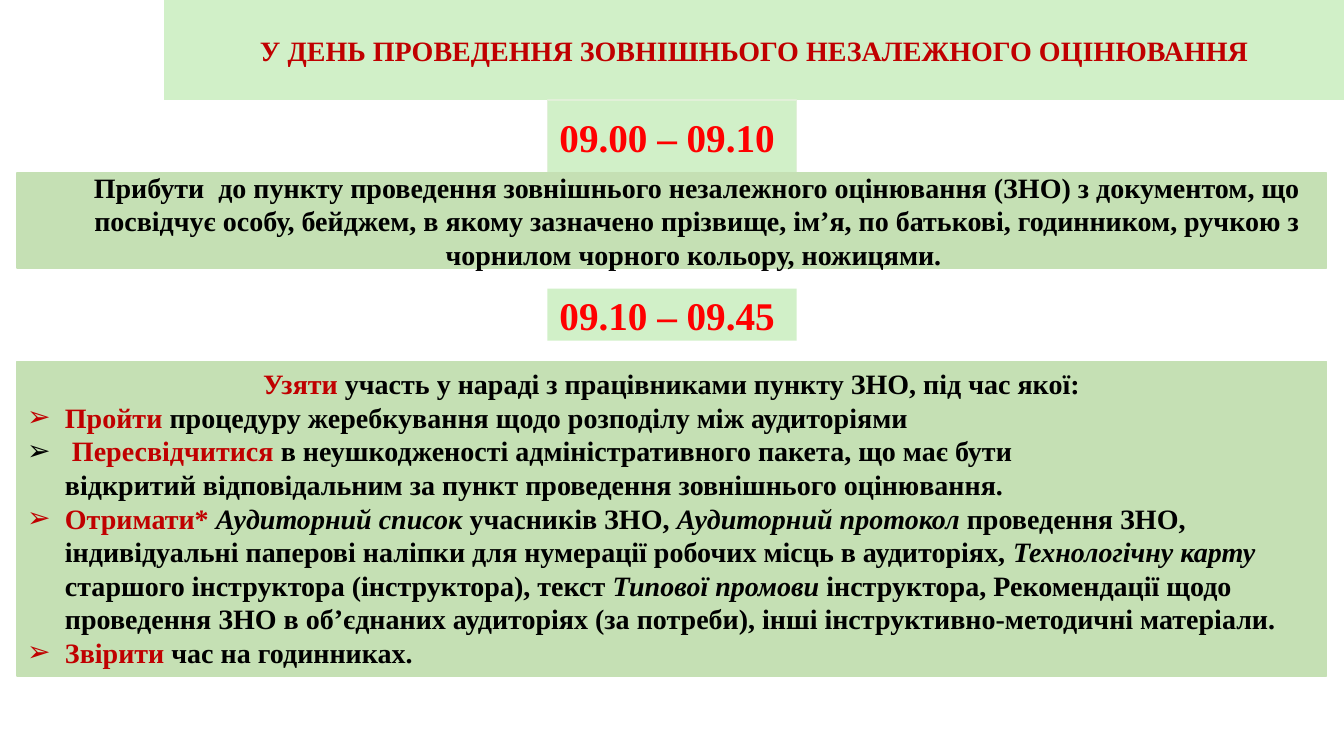
from lxml import etree
from pptx import Presentation
from pptx.dml.color import RGBColor
from pptx.enum.shapes import MSO_SHAPE
from pptx.enum.text import MSO_ANCHOR, MSO_AUTO_SIZE, PP_ALIGN
from pptx.oxml.ns import qn
from pptx.util import Pt

RECT = MSO_SHAPE.RECTANGLE
TOP, MIDDLE = MSO_ANCHOR.TOP, MSO_ANCHOR.MIDDLE
LEFT, CENTER = PP_ALIGN.LEFT, PP_ALIGN.CENTER
FIXED = MSO_AUTO_SIZE.NONE

MINT, SAGE, PALE = "D1F0C8", "C5E0B4", "E2F0D9"
DARK, RED, BLACK = "C00000", "FF0000", "000000"


def color(code):
    return RGBColor.from_string(code)


class Page:
    font = "Times New Roman"

    def __init__(self, slide):
        self.slide = slide

    def style(self, shape, box, fill, line=None, anchor=MIDDLE):
        shape.left, shape.top, shape.width, shape.height = map(Pt, box)
        shape.fill.solid()
        shape.fill.fore_color.rgb = color(fill)
        if line:
            shape.line.color.rgb = color(line)
            shape.line.width = Pt(1)
        else:
            shape.line.fill.background()
        frame = shape.text_frame
        frame.word_wrap = True
        frame.auto_size = FIXED
        frame.vertical_anchor = anchor
        return frame

    def rect(self, box, fill, line=None):
        shape = self.slide.shapes.add_shape(RECT, *map(Pt, box))
        shape.shadow.inherit = False
        return self.style(shape, box, fill, line)

    def para(self, par, runs, size=20, align=CENTER, margin=0, bullet=None):
        props = par._p.get_or_add_pPr()
        props.set("marL", str(Pt(margin)))
        props.set("indent", str(Pt(-margin if bullet else 0)))
        if bullet:
            etree.SubElement(props, qn("a:buChar")).set("char", bullet)
        else:
            etree.SubElement(props, qn("a:buNone"))
        par.alignment = align
        par.space_before = Pt(0)
        for text, ink, *slant in runs:
            for i, part in enumerate(text.split("\n")):
                if i:
                    par.add_line_break()
                run = par.add_run()
                run.text = part
                font = run.font
                font.name, font.size = self.font, Pt(size)
                font.bold, font.italic = True, bool(slant)
                font.color.rgb = color(ink)


def main():
    deck = Presentation()
    deck.slide_width, deck.slide_height = Pt(960), Pt(540)
    slide = deck.slides.add_slide(deck.slide_layouts[1])
    page = Page(slide)
    title, body = slide.placeholders

    # Title band
    frame = page.style(title, (117.4, 0, 842.6, 71.3), MINT, MINT)
    page.para(frame.paragraphs[0], [
        ("У ДЕНЬ ПРОВЕДЕННЯ ЗОВНІШНЬОГО НЕЗАЛЕЖНОГО ОЦІНЮВАННЯ", DARK)])

    # Time slots
    for text, top, height, line in (("09.00 – 09.10 ", 71.3, 52.3, PALE),
                                    ("09.10 – 09.45 ", 206.2, 37.1, None)):
        frame = page.rect((391, top, 178, height), MINT, line)
        page.para(frame.paragraphs[0], [(text, RED)], size=28)

    # Arrival
    frame = page.rect((12.2, 123.6, 935.4, 67.8), SAGE, SAGE)
    page.para(frame.paragraphs[0], [(
        "Прибути  до пункту проведення зовнішнього незалежного оцінювання "
        "(ЗНО) з документом, що посвідчує особу, бейджем, в якому зазначено "
        "прізвище, ім’я, по батькові, годинником, ручкою з чорнилом чорного "
        "кольору, ножицями. ", BLACK)], margin=36)

    # Briefing tasks
    frame = page.style(body, (12.2, 258.3, 935.4, 224.6), SAGE, SAGE, TOP)
    page.para(frame.paragraphs[0], [
        ("Узяти", DARK),
        (" участь у нараді з працівниками пункту ЗНО, під час якої:", BLACK)])
    tasks = [
        [("Пройти", DARK),
         (" процедуру жеребкування щодо розподілу між аудиторіями", BLACK)],
        [(" ", BLACK), ("Пересвідчитися ", DARK),
         ("в неушкодженості адміністративного пакета, що має бути\n"
          "відкритий відповідальним за пункт проведення зовнішнього "
          "оцінювання.", BLACK)],
        [("Отримати* ", DARK),
         ("Аудиторний список ", BLACK, "i"),
         ("учасників ЗНО, ", BLACK),
         ("Аудиторний протокол ", BLACK, "i"),
         ("проведення ЗНО, індивідуальні паперові наліпки для нумерації "
          "робочих місць в аудиторіях, ", BLACK),
         ("Технологічну карту ", BLACK, "i"),
         ("старшого інструктора (інструктора), текст ", BLACK),
         ("Типової промови ", BLACK, "i"),
         ("інструктора, Рекомендації щодо проведення ЗНО в об’єднаних "
          "аудиторіях (за потреби), інші інструктивно-методичні матеріали.",
          BLACK)],
        [("Звірити", DARK), (" час на годинниках.", BLACK)],
    ]
    for runs in tasks:
        page.para(frame.add_paragraph(), runs, align=LEFT, margin=27,
                  bullet="➢")

    deck.save("out.pptx")


if __name__ == "__main__":
    main()
